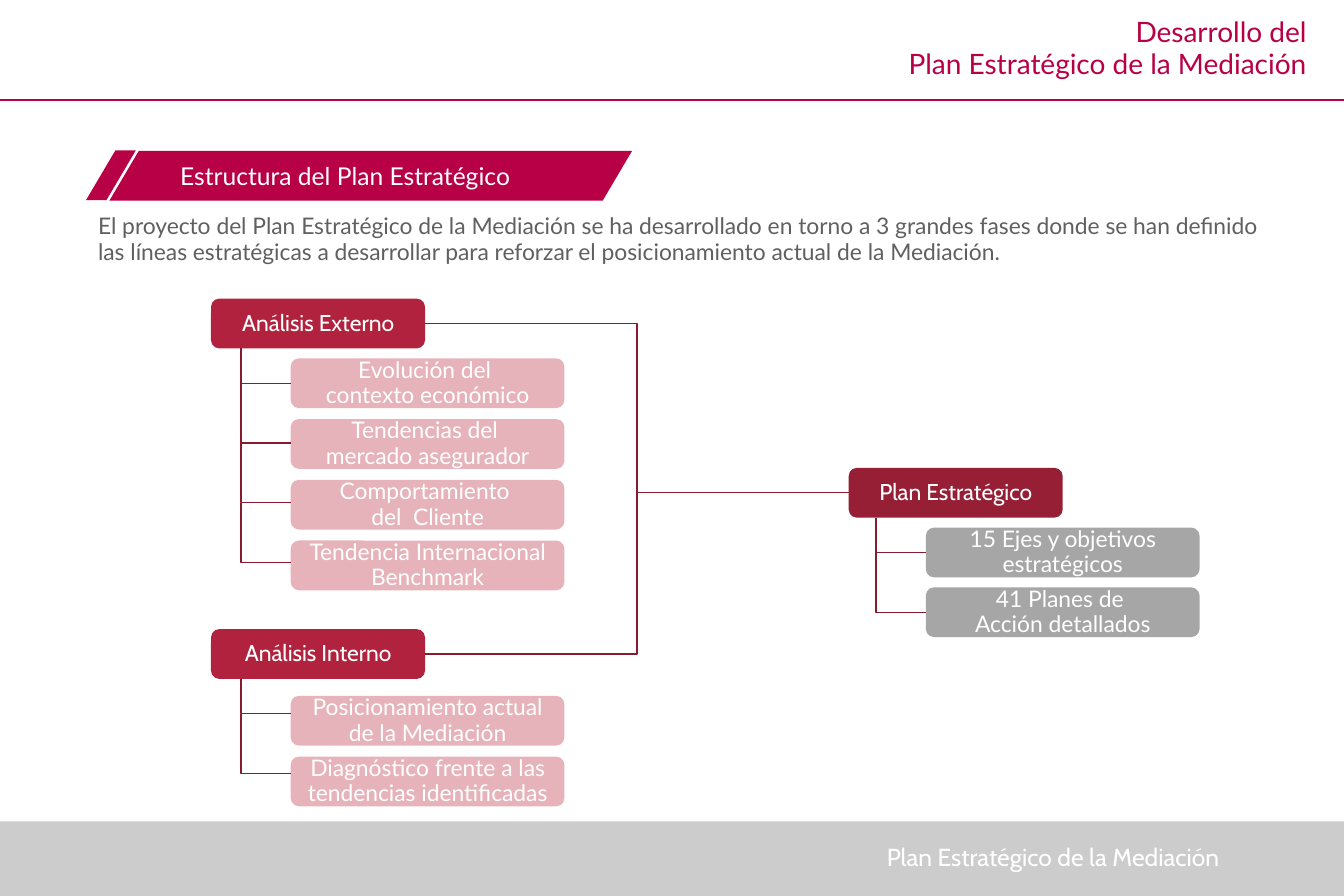
from dataclasses import dataclass

from lxml.etree import SubElement
from pptx import Presentation
from pptx.dml.color import RGBColor
from pptx.enum.shapes import MSO_CONNECTOR, MSO_SHAPE
from pptx.enum.text import MSO_ANCHOR, PP_ALIGN
from pptx.oxml.ns import qn
from pptx.util import Cm, Pt

# The slide is a grid of 27 columns by 18 rows, one centimetre each.
COLUMNS, ROWS = 27, 18
BOX_HEIGHT = 1
HEADING_WIDTH, ITEM_WIDTH = 4.3, 5.5
BRANCH_LENGTH, BRANCH_DROP, BRANCH_PITCH = 1, 0.7, 1.2


@dataclass(frozen=True)
class Theme:
    crimson: str = "B80047"
    heading: str = "B0223D"
    result: str = "961E35"
    pink: str = "E7B3BA"
    gray: str = "A6A6A6"
    footer: str = "CCCCCC"
    wire: str = "891B30"
    body: str = "606060"
    white: str = "FFFFFF"
    text_font: str = "Lato"
    label_font: str = "Cabin"
    title_size: float = 16
    banner_size: float = 14
    text_size: float = 13
    line_width: float = 0.75
    line_spacing: float = 0.93


THEME = Theme()


def grid(*lengths):
    return [Cm(length) for length in lengths]


def write_text(shape, text, *, size=THEME.text_size, font=THEME.text_font,
               color=THEME.white, align=PP_ALIGN.LEFT, anchor=MSO_ANCHOR.TOP,
               margins=(0, 0.08, 0, 0)):
    """Write one paragraph per line of text; margins run left, top, right, bottom."""
    frame = shape.text_frame
    frame.word_wrap = True
    frame.vertical_anchor = anchor
    (frame.margin_left, frame.margin_top,
     frame.margin_right, frame.margin_bottom) = grid(*margins)
    frame.text = text
    for paragraph in frame.paragraphs:
        paragraph.alignment = align
        paragraph.line_spacing = THEME.line_spacing
        paragraph.font.name = font
        paragraph.font.size = Pt(size)
        paragraph.font.color.rgb = RGBColor.from_string(color)


def add_text(slide, text, area, **text_format):
    write_text(slide.shapes.add_textbox(*grid(*area)), text, **text_format)


def add_filled(slide, kind, area, color):
    shape = slide.shapes.add_shape(kind, *grid(*area))
    shape.shadow.inherit = False
    shape.fill.solid()
    shape.fill.fore_color.rgb = RGBColor.from_string(color)
    shape.line.fill.background()
    return shape


def add_box(slide, text, area, color, font=THEME.text_font):
    box = add_filled(slide, MSO_SHAPE.ROUNDED_RECTANGLE, area, color)
    write_text(box, text, font=font, align=PP_ALIGN.CENTER,
               anchor=MSO_ANCHOR.MIDDLE, margins=(0.1, 0.1, 0.1, 0.1))
    return box


def add_wire(slide, start, end, kind=MSO_CONNECTOR.STRAIGHT, color=THEME.wire):
    wire = slide.shapes.add_connector(kind, *grid(*start, *end))
    wire.line.color.rgb = RGBColor.from_string(color)
    wire.line.width = Pt(THEME.line_width)
    SubElement(wire._element.spPr, qn("a:effectLst"))
    return wire


def add_corner(slide, start, end):
    """Add a wire that runs down from start and then across to end."""
    wire = add_wire(slide, start, end, MSO_CONNECTOR.ELBOW)
    adjustments = wire._element.spPr.find(qn("a:prstGeom")).get_or_add_avLst()
    SubElement(adjustments, qn("a:gd"), name="adj1", fmla="val 0")


def add_branch(slide, title, items, *, left, top, color, item_color,
               indent, drop, pitch):
    """Add a heading with its items hanging from a trunk; return the heading."""
    heading = add_box(slide, title, (left, top, HEADING_WIDTH, BOX_HEIGHT),
                      color, THEME.label_font)
    item_left = left + indent
    trunk = item_left - BRANCH_LENGTH
    bottom = top + BOX_HEIGHT
    joint = bottom
    for index, text in enumerate(items):
        item_top = top + drop + index * pitch
        add_box(slide, text, (item_left, item_top, ITEM_WIDTH, BOX_HEIGHT), item_color)
        level = bottom + BRANCH_DROP + index * BRANCH_PITCH
        add_corner(slide, (trunk, joint), (item_left, level))
        joint = level
    return heading


def add_frame(slide):
    """Add the title, the header rule and the footer band."""
    add_text(slide, "Desarrollo del\nPlan Estratégico de la Mediación",
             (16.5, 0.23, 10, 1.5), size=THEME.title_size, color=THEME.crimson,
             align=PP_ALIGN.RIGHT, margins=(0.25, 0.13, 0.25, 0.13))
    add_wire(slide, (0, 2.01), (COLUMNS, 2.01), color=THEME.crimson)
    footer = add_filled(slide, MSO_SHAPE.RECTANGLE, (0, ROWS - 1.5, COLUMNS, 1.5),
                        THEME.footer)
    write_text(footer, "Plan Estratégico de la Mediación", size=THEME.banner_size,
               font=THEME.label_font, align=PP_ALIGN.RIGHT,
               anchor=MSO_ANCHOR.MIDDLE, margins=(0.25, 0.13, 2.5, 0.13))


def add_introduction(slide):
    for left, top, width in ((2.2, 3.03, 10.5), (1.73, 3.02, 1)):
        stripe = add_filled(slide, MSO_SHAPE.PARALLELOGRAM, (left, top, width, 1),
                            THEME.crimson)
        stripe.adjustments[0] = 0.59
    add_text(slide, "Estructura del Plan Estratégico", (3.62, 3.2, 8, 0.75),
             size=THEME.banner_size)
    add_text(slide, "El proyecto del Plan Estratégico de la Mediación se ha "
             "desarrollado en torno a 3 grandes fases donde se han definido las "
             "líneas estratégicas a desarrollar para reforzar el posicionamiento "
             "actual de la Mediación.", (1.97, 4.23, 23.52, 1.2), color=THEME.body)


def add_diagram(slide):
    analysis = dict(left=4.24, color=THEME.heading, item_color=THEME.pink,
                    indent=1.6, pitch=1.22)
    external = add_branch(
        slide, "Análisis Externo",
        ["Evolución del \ncontexto económico", "Tendencias del \nmercado asegurador",
         "Comportamiento \ndel  Cliente", "Tendencia Internacional Benchmark"],
        top=6, drop=1.2, **analysis)
    internal = add_branch(
        slide, "Análisis Interno",
        ["Posicionamiento actual de la Mediación",
         "Diagnóstico frente a las tendencias identificadas"],
        top=12.64, drop=1.34, **analysis)
    plan = add_branch(
        slide, "Plan Estratégico",
        ["15 Ejes y objetivos estratégicos", "41 Planes de \nAcción detallados"],
        left=17.05, top=9.4, color=THEME.result, item_color=THEME.gray,
        indent=1.55, drop=1.2, pitch=1.2)
    for source in (external, internal):
        link = add_wire(slide, (0, 0), (1, 1), MSO_CONNECTOR.ELBOW)
        link.begin_connect(source, 3)
        link.end_connect(plan, 1)


def main():
    presentation = Presentation()
    presentation.slide_width, presentation.slide_height = grid(COLUMNS, ROWS)
    slide = presentation.slides.add_slide(presentation.slide_layouts[6])
    add_frame(slide)
    add_introduction(slide)
    add_diagram(slide)
    presentation.save("out.pptx")


if __name__ == "__main__":
    main()
